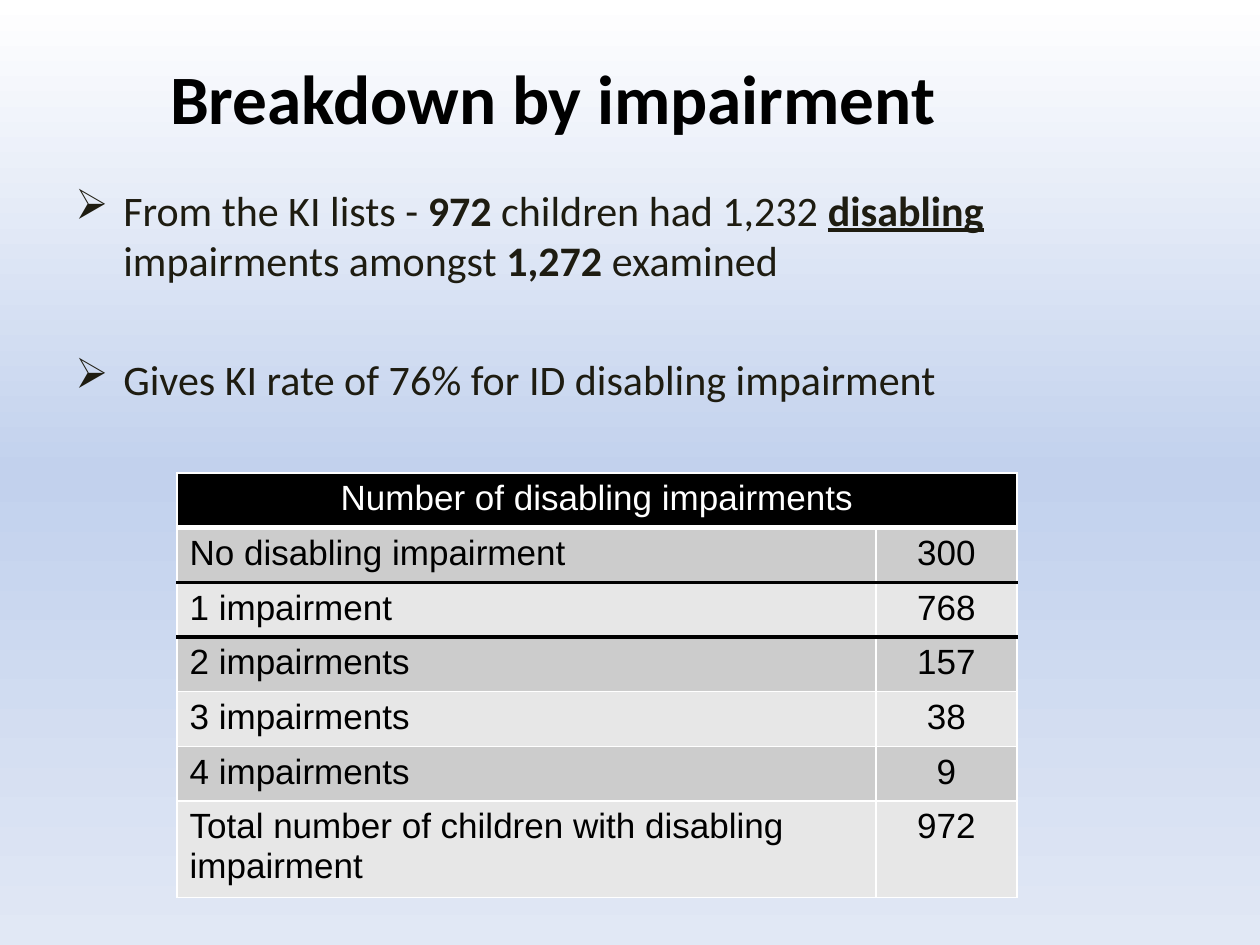
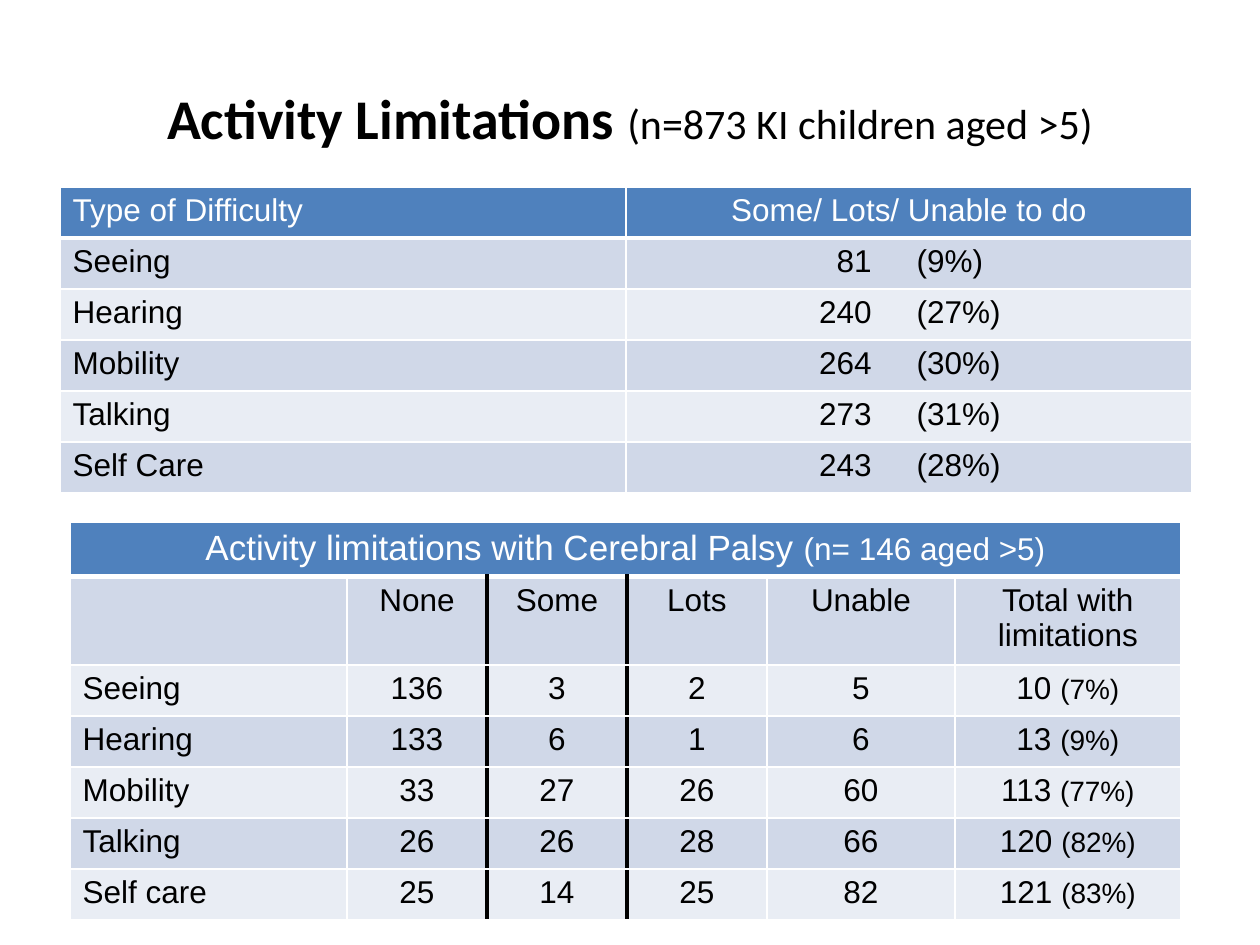
from copy import deepcopy
from dataclasses import dataclass
from typing import NamedTuple

from lxml import etree
from pptx import Presentation
from pptx.dml.color import RGBColor
from pptx.enum.text import MSO_ANCHOR, PP_ALIGN
from pptx.oxml.ns import qn
from pptx.util import Emu, Pt

LEFT, CENTER = PP_ALIGN.LEFT, PP_ALIGN.CENTER
TOP, MIDDLE = MSO_ANCHOR.TOP, MSO_ANCHOR.MIDDLE

# Shared look
PX_PER_INCH = 126
BLACK = RGBColor(0x00, 0x00, 0x00)
WHITE = RGBColor(0xFF, 0xFF, 0xFF)
BODY_INK = RGBColor(0x1E, 0x1C, 0x11)
DARK_GRAY = RGBColor(0xCC, 0xCC, 0xCC)
LIGHT_GRAY = RGBColor(0xE7, 0xE7, 0xE7)
BLUE = RGBColor(0x4F, 0x81, 0xBD)
DARK_BLUE = RGBColor(0xD0, 0xD8, 0xE8)
LIGHT_BLUE = RGBColor(0xE9, 0xED, 0xF4)
SKY = [(0, WHITE), (0.5, RGBColor(0xC2, 0xD1, 0xED)), (1, RGBColor(0xE1, 0xE8, 0xF5))]
TITLE_FONT, TABLE_FONT = "Calibri", "Arial"
BULLET_INDENT = 48
COUNT_TABS = [(233, "r"), (278, "l")]  # counts end at the first, shares start at the second
THIN, RULE, HEADER_LINE = 1, 2.25, 3


class Run(NamedTuple):
    text: str
    size: float | None = None
    bold: bool | None = None
    underline: bool | None = None


class Box(NamedTuple):
    left: int
    top: int
    width: int
    height: int


class Palette(NamedTuple):
    header: RGBColor
    odd: RGBColor
    even: RGBColor


Text = str | list[Run]


@dataclass
class TableSpec:
    left: int
    top: int
    columns: list[int]
    row_heights: list[int]
    rows: list[list[Text]]
    palette: Palette
    size: int
    rules_below: tuple[int, ...] = ()
    rules_right: tuple[int, ...] = ()


GRAYS = Palette(BLACK, DARK_GRAY, LIGHT_GRAY)
BLUES = Palette(BLUE, DARK_BLUE, LIGHT_BLUE)


def px(length: int) -> Emu:
    return Emu(round(length * 914400 / PX_PER_INCH))


def write(paragraph, text: Text, font: str, size: float, color: RGBColor,
          align=LEFT, bold: bool = False) -> None:
    """Style the paragraph once, then add runs with only their differences."""
    paragraph.alignment = align
    paragraph.font.name = font
    paragraph.font.size = Pt(size)
    paragraph.font.bold = bold
    paragraph.font.color.rgb = color
    for part in [Run(text)] if isinstance(text, str) else text:
        run = paragraph.add_run()
        run.text = part.text
        if part.size:
            run.font.size = Pt(part.size)
        if part.bold is not None:
            run.font.bold = part.bold
        if part.underline:
            run.font.underline = True


def add_frame(slide, box: Box, anchor):
    frame = slide.shapes.add_textbox(*map(px, box)).text_frame
    frame.word_wrap = True
    frame.vertical_anchor = anchor
    return frame


def add_title(slide, box: Box, text: Text, size: float) -> None:
    frame = add_frame(slide, box, MIDDLE)
    write(frame.paragraphs[0], text, TITLE_FONT, size, BLACK, CENTER, bold=True)


def add_bullets(slide, box: Box, points: list[Text], size: int, gap: int) -> None:
    frame = add_frame(slide, box, TOP)
    for number, point in enumerate(points):
        paragraph = frame.add_paragraph() if number else frame.paragraphs[0]
        properties = paragraph._p.get_or_add_pPr()
        properties.set("marL", str(px(BULLET_INDENT)))
        properties.set("indent", str(-px(BULLET_INDENT)))
        etree.SubElement(properties, qn("a:buChar"), char="➢")
        paragraph.space_before = Pt(gap if number else 0)
        write(paragraph, point, TITLE_FONT, size, BODY_INK)


def set_tabs(paragraph) -> None:
    tabs = etree.SubElement(paragraph._p.get_or_add_pPr(), qn("a:tabLst"))
    for position, align in COUNT_TABS:
        etree.SubElement(tabs, qn("a:tab"), pos=str(px(position)), algn=align)


def add_border(cell, side: str, width: float, color: RGBColor) -> None:
    line = etree.SubElement(cell._tc.get_or_add_tcPr(), qn(f"a:ln{side}"), w=str(Pt(width)))
    fill = etree.SubElement(line, qn("a:solidFill"))
    etree.SubElement(fill, qn("a:srgbClr"), val=str(color))


def edge(spec: TableSpec, row: int, column: int, side: str) -> tuple[float, RGBColor]:
    """Width and colour of one cell edge, the same seen from both neighbours."""
    line_below = row - (side == "T")
    line_right = column - (side == "L")
    if side in "TB":
        if line_below in spec.rules_below:
            return RULE, BLACK
        if line_below == 0:
            return HEADER_LINE, WHITE
    elif row > 0 and line_right in spec.rules_right:
        return RULE, BLACK
    return THIN, WHITE


def add_table(slide, spec: TableSpec) -> None:
    box = Box(spec.left, spec.top, sum(spec.columns), sum(spec.row_heights))
    table = slide.shapes.add_table(
        len(spec.rows), len(spec.columns), *map(px, box)).table
    table.first_row = table.horz_banding = False
    for column, width in zip(table.columns, spec.columns):
        column.width = px(width)
    for row, height in zip(table.rows, spec.row_heights):
        row.height = px(height)
    merged = len(spec.rows[0]) == 1
    if merged:
        table.cell(0, 0).merge(table.cell(0, len(spec.columns) - 1))

    for r, texts in enumerate(spec.rows):
        for c in range(len(spec.columns)):
            cell = table.cell(r, c)
            for side in "LRTB":
                add_border(cell, side, *edge(spec, r, c, side))
            cell.fill.solid()
            cell.fill.fore_color.rgb = spec.palette[0 if r == 0 else 2 - r % 2]
            if c >= len(texts):
                continue
            paragraph = cell.text_frame.paragraphs[0]
            tabbed = isinstance(texts[c], str) and "\t" in texts[c]
            if tabbed:
                set_tabs(paragraph)
            centered = (c > 0 or (merged and r == 0)) and not tabbed
            write(paragraph, texts[c], TABLE_FONT, spec.size,
                  BLACK if r else WHITE, CENTER if centered else LEFT)


def set_gradient(slide, stops: list[tuple[float, RGBColor]]) -> None:
    fill = slide.background.fill
    fill.gradient()
    fill.gradient_angle = 270
    stop_list = slide.element.find(".//" + qn("a:gsLst"))
    while len(stop_list) < len(stops):
        stop_list.append(deepcopy(stop_list[-1]))
    for stop, (position, color) in zip(fill.gradient_stops, stops):
        stop.position = position
        stop.color.rgb = color


def build_impairment_slide(slide) -> None:
    set_gradient(slide, SKY)
    add_title(slide, Box(63, 42, 980, 110), "Breakdown by impairment", 39.6)
    findings = [
        [Run("From the KI lists - "), Run("972", bold=True),
         Run(" children had 1,232 "), Run("disabling", bold=True, underline=True),
         Run(" impairments amongst "), Run("1,272", bold=True), Run(" examined")],
        "Gives KI rate of 76% for ID disabling impairment",
    ]
    add_bullets(slide, Box(63, 178, 1134, 667), findings, size=24, gap=39)
    add_table(slide, TableSpec(
        left=177, top=473, columns=[699, 141], row_heights=[52] * 6 + [91],
        rows=[
            ["Number of disabling impairments"],
            ["No disabling impairment", "300"],
            ["1 impairment", "768"],
            ["2 impairments", "157"],
            ["3 impairments", "38"],
            ["4 impairments", "9"],
            ["Total number of children with disabling impairment", "972"],
        ],
        palette=GRAYS, size=20, rules_below=(1, 2)))


def build_activity_slide(slide) -> None:
    add_title(slide, Box(63, 38, 1134, 158),
              [Run("Activity Limitations "),
               Run("(n=873 KI children aged >5)", size=24, bold=False)], 32)

    # All children
    difficulties = [("Seeing", 81, 9), ("Hearing", 240, 27), ("Mobility", 264, 30),
                    ("Talking", 273, 31), ("Self Care", 243, 28)]
    add_table(slide, TableSpec(
        left=60, top=187, columns=[566, 566], row_heights=[51] * 6,
        rows=[["Type of Difficulty", "Some/ Lots/ Unable to do"]]
        + [[name, f"\t{count}\t({share}%)"] for name, count, share in difficulties],
        palette=BLUES, size=18))

    # Children with cerebral palsy
    limitations = [
        ("Seeing", (136, 3, 2, 5), 10, 7),
        ("Hearing", (133, 6, 1, 6), 13, 9),
        ("Mobility", (33, 27, 26, 60), 113, 77),
        ("Talking", (26, 26, 28, 66), 120, 82),
        ("Self care", (25, 14, 25, 82), 121, 83),
    ]
    add_table(slide, TableSpec(
        left=70, top=522, columns=[277, 140, 140, 140, 188, 226],
        row_heights=[51, 83] + [51] * 5,
        rows=[
            [[Run("Activity limitations with Cerebral Palsy ", size=20),
              Run("(n= 146 aged >5)")]],
            ["", "None", "Some", "Lots", "Unable", "Total with limitations"],
        ] + [[name, *map(str, counts), [Run(f"{total} "), Run(f"({share}%)", size=16)]]
             for name, counts, total, share in limitations],
        palette=BLUES, size=18, rules_right=(1, 2)))


def main() -> None:
    deck = Presentation()
    deck.slide_width, deck.slide_height = px(1260), px(945)
    blank = deck.slide_layouts[6]
    for build in (build_impairment_slide, build_activity_slide):
        build(deck.slides.add_slide(blank))
    deck.save("out.pptx")


if __name__ == "__main__":
    main()
